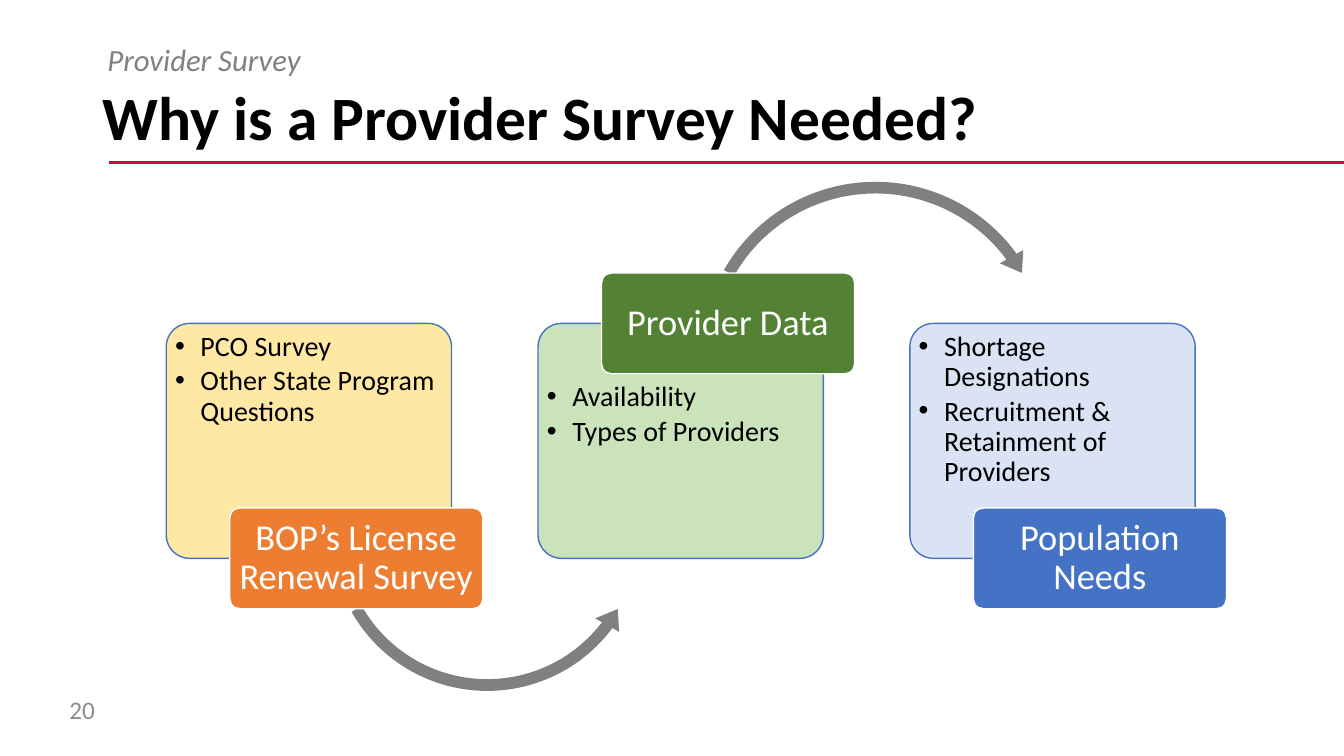
from lxml import etree
from pptx import Presentation
from pptx.dml.color import RGBColor
from pptx.enum import shapes, text
from pptx.oxml.ns import qn
from pptx.util import Cm, Pt

FONT = "Calibri"
BLACK = RGBColor(0, 0, 0)
WHITE = RGBColor(255, 255, 255)
RED = RGBColor(0xC4, 0x0E, 0x3E)
GRAY = RGBColor(0x80, 0x80, 0x80)
PALE = RGBColor(0x8C, 0x8C, 0x8C)
BLUE = RGBColor(0x44, 0x72, 0xC4)
SKY = RGBColor(0xDA, 0xE3, 0xF3)
GREEN = RGBColor(0x54, 0x82, 0x35)
MINT = RGBColor(0xC5, 0xE0, 0xB4)
ORANGE = RGBColor(0xED, 0x7D, 0x31)
CREAM = RGBColor(0xFF, 0xE6, 0x99)

LEFT, STEP = 4.19, 9.37
CARD_TOP, CARD_W, CARD_H = 8.15, 7.19, 5.92
LABEL_W, LABEL_H, SHIFT = 6.38, 2.54, 1.6
KINDS = shapes.MSO_SHAPE

# items, card fill, alpha %, label, label fill, label on top
STAGES = [
    (["PCO Survey", "Other State Program Questions"],
     CREAM, 90, "BOP’s License Renewal Survey", ORANGE, False),
    (["Availability", "Types of Providers"],
     MINT, 90, "Provider Data", GREEN, True),
    (["Shortage Designations", "Recruitment & Retainment of Providers"],
     SKY, 100, "Population Needs", BLUE, False),
]
# kind, left, top, size, adjustments; one arrow per gap between stages
ARROWS = [
    (KINDS.LEFT_CIRCULAR_ARROW, 8.15, 9.35, 8.26,
     [0.036, 4.421, 22.176, 90.245, 0.042]),
    (KINDS.CIRCULAR_ARROW, 17.48, 4.39, 9.17,
     [0.032, 3.945, 194.299, 125.755, 0.037]),
]


def style(para, size, color, bold=False, italic=False, space=0.9):
    para.line_spacing = space
    font = para.font
    font.name, font.size = FONT, Pt(size)
    font.bold, font.italic = bold, italic
    font.color.rgb = color


def add_text(slide, words, box, size, color, anchor=text.MSO_ANCHOR.MIDDLE,
             **looks):
    frame = slide.shapes.add_textbox(*map(Cm, box)).text_frame
    frame.word_wrap = True
    frame.vertical_anchor = anchor
    frame.text = words
    style(frame.paragraphs[0], size, color, **looks)


def add_rule(slide):
    line = slide.shapes.add_connector(
        shapes.MSO_CONNECTOR.STRAIGHT, Cm(2.74), Cm(4.09), Cm(33.87), Cm(4.09))
    line.line.color.rgb = RED
    line.line.width = Pt(2.25)
    etree.SubElement(line._element.spPr, qn("a:effectLst"))


def add_shape(slide, kind, box, fill, adjust, edge=None):
    shape = slide.shapes.add_shape(kind, *map(Cm, box))
    shape.shadow.inherit = False
    shape.fill.solid()
    shape.fill.fore_color.rgb = fill
    for i, value in enumerate(adjust):
        shape.adjustments[i] = value
    if edge is None:
        shape.line.fill.background()
    else:
        shape.line.color.rgb = edge
        shape.line.width = Pt(1)
    return shape


def set_frame(shape, side, top, anchor):
    frame = shape.text_frame
    frame.word_wrap = True
    frame.vertical_anchor = anchor
    frame.margin_left = frame.margin_right = Cm(side)
    frame.margin_top, frame.margin_bottom = Cm(top), Cm(0.05)
    return frame


def add_bullet(para):
    props = para._p.get_or_add_pPr()
    props.set("marL", str(Cm(0.64)))
    props.set("indent", str(Cm(-0.64)))
    etree.SubElement(props, qn("a:buFont"), typeface="Arial")
    etree.SubElement(props, qn("a:buChar"), char="•")


def add_card(slide, left, items, fill, alpha, drop):
    """Draw a bulleted card; drop is the room kept above its text."""
    card = add_shape(slide, KINDS.ROUNDED_RECTANGLE,
                     (left, CARD_TOP, CARD_W, CARD_H), fill, [0.1], BLUE)
    if alpha < 100:
        color = card._element.spPr.find(qn("a:solidFill"))[0]
        etree.SubElement(color, qn("a:alpha"), val=str(alpha * 1000))
    frame = set_frame(card, 0.05, 0.05 + drop, text.MSO_ANCHOR.TOP)
    frame.text = "\n".join(items)
    for para in frame.paragraphs:
        add_bullet(para)
        para.alignment = text.PP_ALIGN.LEFT
        para.space_after = Pt(3)
        style(para, 20, BLACK)


def add_label(slide, left, top, words, fill):
    label = add_shape(slide, KINDS.ROUNDED_RECTANGLE,
                      (left, top, LABEL_W, LABEL_H), fill, [0.1], WHITE)
    frame = set_frame(label, 0.11, 0.05, text.MSO_ANCHOR.MIDDLE)
    frame.text = words
    para = frame.paragraphs[0]
    para.alignment = text.PP_ALIGN.CENTER
    style(para, 26, WHITE)


def main():
    deck = Presentation()
    deck.slide_width, deck.slide_height = Cm(33.87), Cm(19.05)
    slide = deck.slides.add_slide(deck.slide_layouts[6])
    add_rule(slide)
    add_text(slide, "Why is a Provider Survey Needed?",
             (2.34, 1.65, 29.21, 2.77), 44, BLACK, bold=True)
    for i, (items, pale, alpha, words, fill, high) in enumerate(STAGES):
        left = LEFT + i * STEP
        add_card(slide, left, items, pale, alpha, LABEL_H / 2 if high else 0)
        if i < len(ARROWS):
            kind, x, y, size, adjust = ARROWS[i]
            add_shape(slide, kind, (x, y, size, size), GRAY, adjust)
        middle = CARD_TOP if high else CARD_TOP + CARD_H
        add_label(slide, left + SHIFT, middle - LABEL_H / 2, words, fill)
    add_text(slide, "20", (1.5, 17.37, 1.5, 1.02), 18, PALE, space=1.0)
    add_text(slide, "Provider Survey", (2.46, 1.02, 29.08, 0.97), 22, GRAY,
             text.MSO_ANCHOR.TOP, italic=True)
    deck.save("out.pptx")


if __name__ == "__main__":
    main()
